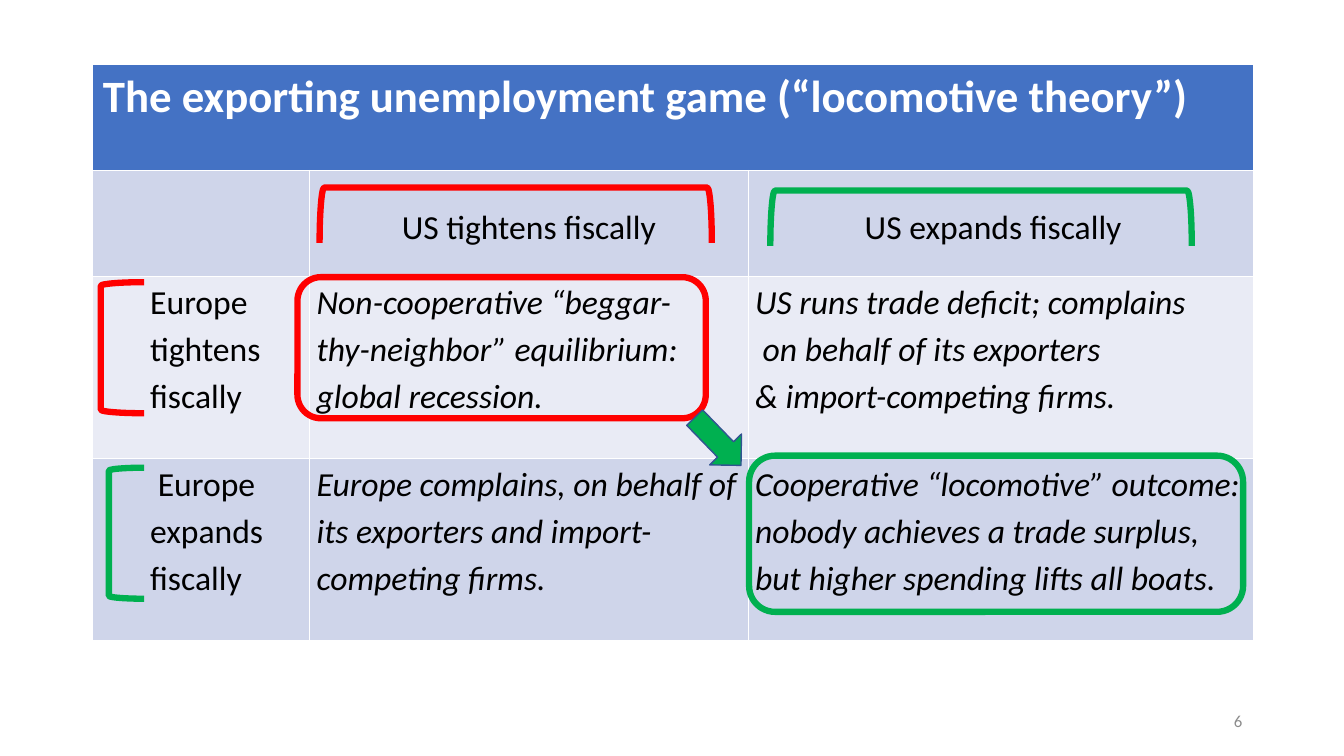
from pptx import Presentation
from pptx.dml.color import RGBColor
from pptx.enum.shapes import MSO_SHAPE
from pptx.enum.text import MSO_ANCHOR, PP_ALIGN
from pptx.util import Inches, Pt

WHITE = RGBColor(0xFF, 0xFF, 0xFF)
BLACK = RGBColor(0x00, 0x00, 0x00)
GRAY = RGBColor(0x8C, 0x8C, 0x8C)
BLUE = RGBColor(0x44, 0x72, 0xC4)
NAVY = RGBColor(0x32, 0x54, 0x91)
DARK_BAND = RGBColor(0xCF, 0xD5, 0xEA)
LIGHT_BAND = RGBColor(0xE9, 0xEB, 0xF5)
RED = RGBColor(0xFF, 0x00, 0x00)
GREEN = RGBColor(0x00, 0xB0, 0x50)

TITLE = "The exporting unemployment game (“locomotive theory”)"
PAYOFFS = [
    ["", "US tightens fiscally", "US expands fiscally"],
    ["Europe tightens fiscally",
     "Non-cooperative “beggar-\vthy-neighbor” equilibrium: \vglobal recession.",
     "US runs trade deficit; complains\v on behalf of its exporters\v& import-competing firms."],
    [" Europe expands fiscally",
     "Europe complains, on behalf of its exporters and import-competing firms.",
     "Cooperative “locomotive” outcome: nobody achieves a trade surplus, "
     "but higher spending lifts all boats."],
]
COLUMN_WIDTHS = [2.15, 4.35, 5.01]
ROW_HEIGHTS = [1.05, 1.05, 1.81, 1.81]


def style_paragraph(paragraph, size, color, bold=False, italic=False):
    font = paragraph.font
    font.name, font.size, font.bold, font.italic = "Calibri", Pt(size), bold, italic
    font.color.rgb = color


def fill_cell(cell, color):
    cell.fill.solid()
    cell.fill.fore_color.rgb = color


def add_payoff_cell(cell, text, row, column):
    fill_cell(cell, LIGHT_BAND if row == 1 else DARK_BAND)
    if not text:
        return
    cell.margin_left = cell.margin_right = Inches(0.07)
    cell.margin_top = cell.margin_bottom = 0
    cell.text = text
    paragraph = cell.text_frame.paragraphs[0]
    paragraph.line_spacing = 1.15
    style_paragraph(paragraph, 24, BLACK, italic=row > 0 and column > 0)
    if row == 0:
        # Column headings sit below their brackets
        paragraph.alignment = PP_ALIGN.CENTER
        cell.margin_top = Inches(0.31)
        if column == 2:
            cell.margin_right = Inches(0.22)
    elif column == 0:
        # Row headings sit right of their brackets
        cell.margin_left = Inches(0.57)


def add_game_table(slide, left, top):
    frame = slide.shapes.add_table(
        len(ROW_HEIGHTS), len(COLUMN_WIDTHS), Inches(left), Inches(top),
        Inches(sum(COLUMN_WIDTHS)), Inches(sum(ROW_HEIGHTS)))
    table = frame.table
    for column, width in zip(table.columns, COLUMN_WIDTHS):
        column.width = Inches(width)
    for row, height in zip(table.rows, ROW_HEIGHTS):
        row.height = Inches(height)

    # Title row across all columns
    title_cell = table.cell(0, 0)
    title_cell.merge(table.cell(0, 2))
    fill_cell(title_cell, BLUE)
    title_cell.text = TITLE
    style_paragraph(title_cell.text_frame.paragraphs[0], 32, WHITE, bold=True)

    # Strategies and payoffs
    for row, texts in enumerate(PAYOFFS):
        for column, text in enumerate(texts):
            add_payoff_cell(table.cell(row + 1, column), text, row, column)


def add_outline(slide, kind, left, top, width, height, color):
    shape = slide.shapes.add_shape(
        kind, Inches(left), Inches(top), Inches(width), Inches(height))
    shape.shadow.inherit = False
    shape.fill.background()
    shape.line.color.rgb = color
    shape.line.width = Pt(4.5)
    return shape


def add_top_bracket(slide, left, top, width, height, color):
    """Turn a left bracket a quarter so that it spans the given box."""
    shift = (width - height) / 2
    bracket = add_outline(slide, MSO_SHAPE.LEFT_BRACKET,
                          left + shift, top - shift, height, width, color)
    bracket.rotation = 90


def add_shift_arrow(slide, left, top, width, height):
    arrow = slide.shapes.add_shape(
        MSO_SHAPE.DOWN_ARROW, Inches(left), Inches(top), Inches(width), Inches(height))
    arrow.shadow.inherit = False
    arrow.rotation = 315.9
    arrow.fill.solid()
    arrow.fill.fore_color.rgb = GREEN
    arrow.line.color.rgb = NAVY
    arrow.line.width = Pt(1)


def add_slide_number(slide, left, top, width, height):
    box = slide.shapes.add_textbox(Inches(left), Inches(top), Inches(width), Inches(height))
    text_frame = box.text_frame
    text_frame.word_wrap = True
    text_frame.vertical_anchor = MSO_ANCHOR.MIDDLE
    text_frame.text = "6"
    paragraph = text_frame.paragraphs[0]
    paragraph.alignment = PP_ALIGN.RIGHT
    style_paragraph(paragraph, 12, GRAY)


def main():
    presentation = Presentation()
    presentation.slide_width = Inches(13.33)
    presentation.slide_height = Inches(7.5)
    slide = presentation.slides.add_slide(presentation.slide_layouts[6])

    add_game_table(slide, 0.92, 0.64)

    # The two equilibria and the move between them
    add_outline(slide, MSO_SHAPE.ROUNDED_RECTANGLE, 2.95, 2.75, 4.05, 1.4, RED)
    add_shift_arrow(slide, 6.9, 4.05, 0.44, 0.66)
    add_outline(slide, MSO_SHAPE.ROUNDED_RECTANGLE, 7.43, 4.52, 4.9, 1.55, GREEN)

    add_slide_number(slide, 9.42, 6.95, 3, 0.4)

    # Brackets marking each strategy
    add_outline(slide, MSO_SHAPE.LEFT_BRACKET, 1, 2.8, 0.43, 1.3, RED)
    add_top_bracket(slide, 3.17, 1.86, 3.89, 0.55, RED)
    add_outline(slide, MSO_SHAPE.LEFT_BRACKET, 1.08, 4.64, 0.35, 1.3, GREEN)
    add_top_bracket(slide, 7.64, 1.89, 4.18, 0.55, GREEN)

    presentation.save("out.pptx")


if __name__ == "__main__":
    main()
